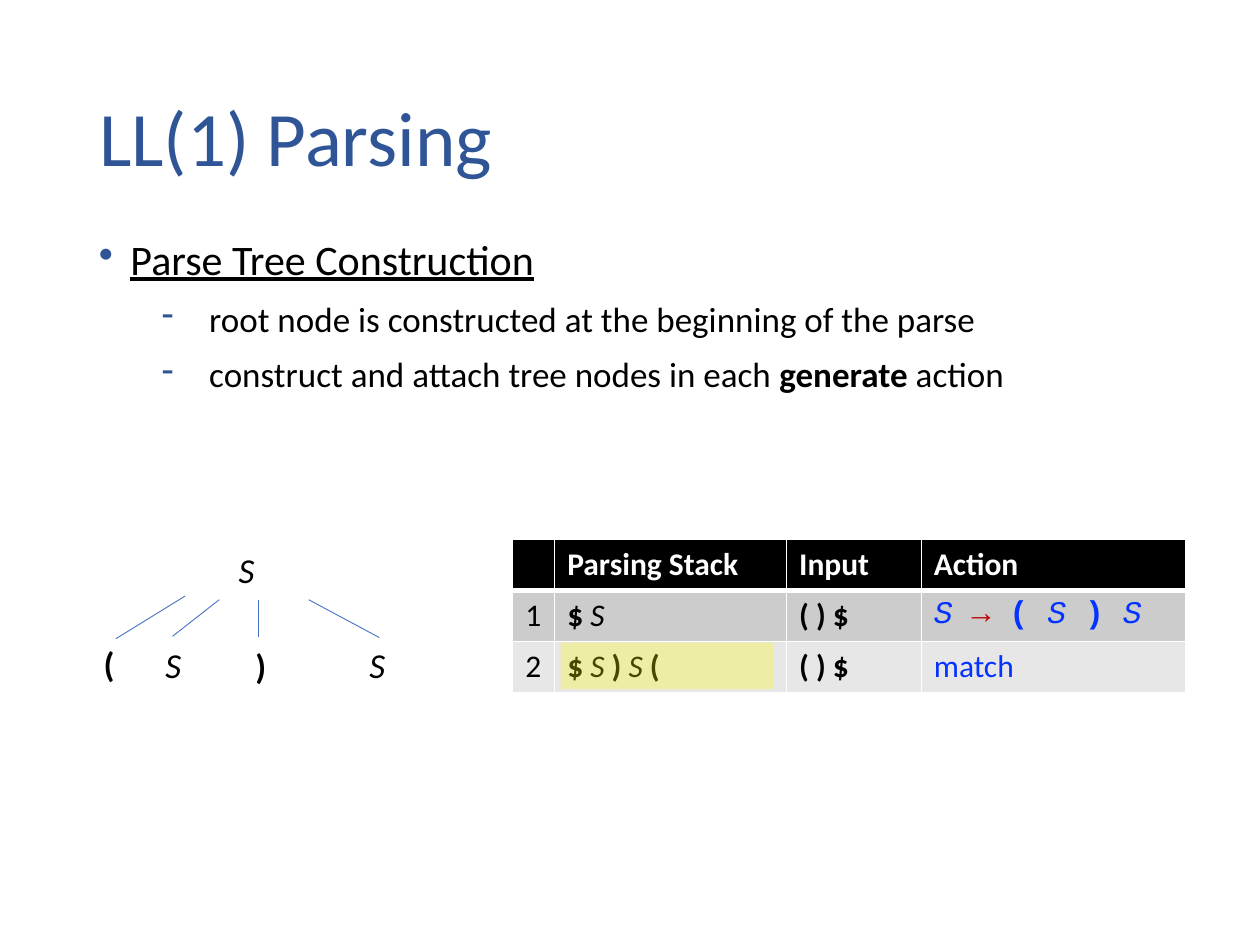
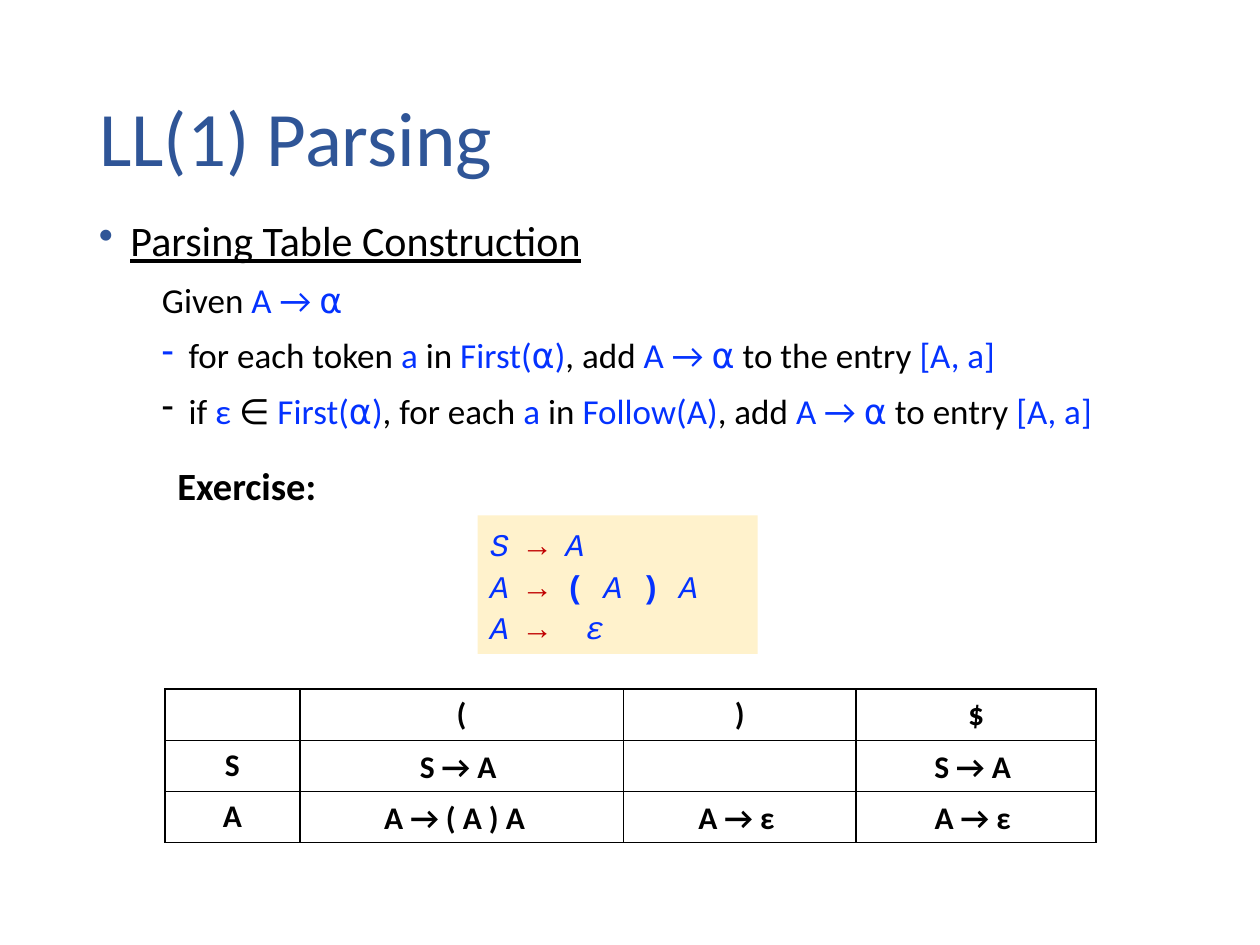
from collections import namedtuple
from itertools import accumulate

from lxml.etree import SubElement
from pptx import Presentation
from pptx.dml.color import RGBColor
from pptx.enum.shapes import MSO_CONNECTOR, MSO_SHAPE
from pptx.enum.text import MSO_ANCHOR, MSO_AUTO_SIZE, PP_ALIGN
from pptx.oxml.ns import qn
from pptx.util import Pt

BLACK = RGBColor(0x00, 0x00, 0x00)
WHITE = RGBColor(0xFF, 0xFF, 0xFF)
NAVY = RGBColor(0x2F, 0x55, 0x97)
BLUE = RGBColor(0x04, 0x32, 0xFF)
RED = RGBColor(0xC0, 0x00, 0x00)
EDGE_BLUE = RGBColor(0x44, 0x72, 0xC4)
YELLOW = RGBColor(0xFF, 0xFF, 0x00)
CREAM = RGBColor(0xFF, 0xF2, 0xCC)
GREY = RGBColor(0xCC, 0xCC, 0xCC)
LIGHT_GREY = RGBColor(0xE7, 0xE7, 0xE7)
BODY_FONT = "Calibri"
CODE_FONT = "Courier New"

# A run of text, and a paragraph made of runs
Run = namedtuple("Run", "text color bold italic underline font",
                 defaults=(BLACK, False, False, False, BODY_FONT))
Para = namedtuple("Para", "runs size margin indent bullet bullet_color",
                  defaults=(20, 0, 0, None, NAVY))


def blue(text):
    return Run(text, BLUE)


def bold(text, color=BLACK):
    return Run(text, color, bold=True)


def italic(text):
    return Run(text, italic=True)


def production(left, right, gap=" "):
    """Grammar rule: variables in italics, tokens in bold."""
    symbols = [Run(s + " " * (n < len(right)), BLUE, s in "()", s not in "()", font=CODE_FONT)
               for n, s in enumerate(right, 1)]
    return [Run(left + " ", BLUE, italic=True, font=CODE_FONT),
            Run("→" + gap, RED, font=CODE_FONT), *symbols]


class Deck:
    def __init__(self):
        self.prs = Presentation()
        self.prs.slide_width, self.prs.slide_height = Pt(720), Pt(540)
        self.slide = None

    def new_slide(self, heading):
        self.slide = self.prs.slides.add_slide(self.prs.slide_layouts[5])
        title = self.slide.shapes.title
        title.left, title.top, title.width, title.height = Pt(49.5), Pt(29), Pt(621), Pt(104)
        title.text_frame.auto_size = MSO_AUTO_SIZE.NONE
        title.text_frame.vertical_anchor = MSO_ANCHOR.MIDDLE
        paragraph = title.text_frame.paragraphs[0]
        paragraph.alignment = PP_ALIGN.LEFT
        paragraph.line_spacing = 0.9
        self.runs(paragraph, [Run(heading, NAVY)], 44)

    def runs(self, paragraph, runs, size):
        for item in runs:
            run = paragraph.add_run()
            run.text = item.text
            font = run.font
            font.name, font.size, font.color.rgb = item.font, Pt(size), item.color
            font.bold, font.italic, font.underline = item.bold, item.italic, item.underline

    def textbox(self, left, top, width, height, wrap=True):
        frame = self.slide.shapes.add_textbox(Pt(left), Pt(top), Pt(width), Pt(height)).text_frame
        frame.word_wrap = wrap
        return frame

    def body(self, top, height, paras):
        frame = self.textbox(49.5, top, 670.5, height)
        for n, para in enumerate(paras):
            paragraph = frame.add_paragraph() if n else frame.paragraphs[0]
            paragraph.line_spacing = 0.9
            paragraph.space_before = Pt(10)
            properties = paragraph._p.get_or_add_pPr()
            properties.set("marL", str(Pt(para.margin)))
            properties.set("indent", str(Pt(para.indent)))
            if para.bullet:
                tint = SubElement(properties, qn("a:buClr"))
                SubElement(tint, qn("a:srgbClr"), val=str(para.bullet_color))
                SubElement(properties, qn("a:buChar"), char=para.bullet)
            self.runs(paragraph, para.runs, para.size)

    def label(self, left, top, width, run, size, align=PP_ALIGN.CENTER):
        frame = self.textbox(left, top, width, size * 1.22 + 7.2, wrap=False)
        frame.paragraphs[0].alignment = align
        self.runs(frame.paragraphs[0], [run], size)

    def grammar(self, left, top, width, height, rules, tab):
        frame = self.textbox(left, top, width, height)
        for n, rule in enumerate(rules):
            paragraph = frame.add_paragraph() if n else frame.paragraphs[0]
            paragraph.line_spacing = 1.1
            tabs = SubElement(paragraph._p.get_or_add_pPr(), qn("a:tabLst"))
            SubElement(tabs, qn("a:tab"), pos=str(Pt(tab)), algn="l")
            self.runs(paragraph, rule, 18)

    def rect(self, left, top, width, height, color, opacity=None):
        rect = self.slide.shapes.add_shape(MSO_SHAPE.RECTANGLE, Pt(left), Pt(top),
                                           Pt(width), Pt(height))
        rect.shadow.inherit = False
        rect.line.fill.background()
        rect.fill.solid()
        rect.fill.fore_color.rgb = color
        if opacity:
            tint = rect.fill._xPr.find(qn("a:solidFill"))[0]
            SubElement(tint, qn("a:alpha"), val=str(opacity * 1000))

    def line(self, x1, y1, x2, y2):
        line = self.slide.shapes.add_connector(MSO_CONNECTOR.STRAIGHT,
                                               Pt(x1), Pt(y1), Pt(x2), Pt(y2))
        line.line.color.rgb = EDGE_BLUE
        line.line.width = Pt(0.5)
        SubElement(line._element.spPr, qn("a:effectLst"))

    def table(self, left, top, widths, row_height, rows, fills, border,
              header_rule=1, align=PP_ALIGN.LEFT):
        table = self.slide.shapes.add_table(
            len(rows), len(widths), Pt(left), Pt(top),
            Pt(sum(widths)), Pt(row_height * len(rows))).table
        table.first_row = table.horz_banding = False
        for column, width in zip(table.columns, widths):
            column.width = Pt(width)
        for r, (row, fill) in enumerate(zip(rows, fills)):
            table.rows[r].height = Pt(row_height)
            for c, runs in enumerate(row):
                cell = table.cell(r, c)
                self.borders(cell, border, top=header_rule if r == 1 else 1,
                             bottom=header_rule if r == 0 else 1)
                if fill:
                    cell.fill.solid()
                    cell.fill.fore_color.rgb = fill
                else:
                    cell.fill.background()
                paragraph = cell.text_frame.paragraphs[0]
                paragraph.alignment = align
                paragraph.font.size = Pt(18)
                self.runs(paragraph, runs, 18)

    def borders(self, cell, color, top, bottom):
        properties = cell._tc.get_or_add_tcPr()
        for side, width in (("L", 1), ("R", 1), ("T", top), ("B", bottom)):
            edge = SubElement(properties, qn("a:ln" + side), w=str(Pt(width)))
            fill = SubElement(edge, qn("a:solidFill"))
            SubElement(fill, qn("a:srgbClr"), val=str(color))


def topic(text):
    return Para([Run(text, underline=True)], 24, 18, -18, "•")


def parse_tree_slide(deck):
    deck.new_slide("LL(1) Parsing")
    deck.body(133, 159, [
        topic("Parse Tree Construction"),
        Para([Run("root node is constructed at the beginning of the parse")], 20, 63, -27, "-"),
        Para([Run("construct and attach tree nodes in each "), bold("generate "),
              Run("action")], 20, 63, -27, "-"),
    ])

    # Parsing steps
    remaining_input = [bold("( ) $")]
    deck.table(293, 308.2, [24, 132.5, 77, 151], 29.25, [
        [[], *([bold(name, WHITE)] for name in ("Parsing Stack", "Input", "Action"))],
        [[Run("1")], [bold("$ "), italic("S")], remaining_input, production("S", "(S)S")],
        [[Run("2")], [bold("$ "), italic("S"), bold(" ) "), italic("S"), bold(" (")],
         remaining_input, [blue("match")]],
    ], [BLACK, GREY, LIGHT_GREY], WHITE, header_rule=3)

    # Parse tree: nodes by centre and top, then edges
    node_width = 24
    for center, top, symbol in [(140.8, 309.6, italic("S")), (62.3, 363.6, bold("(")),
                                (99, 364.3, italic("S")), (149, 365, bold(")")),
                                (215.6, 364.3, italic("S"))]:
        deck.label(center - node_width / 2, top, node_width, symbol, 20)
    for edge in [(105.8, 340.6, 66.2, 365), (125.3, 342.7, 98.6, 363.6),
                 (147.6, 342.7, 147.6, 364.3), (176.4, 342.7, 216.7, 364.3)]:
        deck.line(*edge)

    # Highlighted stack
    deck.rect(320.4, 367.2, 121.7, 26.6, YELLOW, opacity=28)


def parsing_table_slide(deck):
    deck.new_slide("LL(1) Parsing")

    # Grammar
    deck.rect(273, 294.5, 160, 79.2, CREAM)
    deck.grammar(273, 294.5, 205, 79.2, [
        production("S", "A"), production("A", "(A)A"), production("A", "ε", gap="\t"),
    ], tab=54.5)

    # Parsing table
    left, top, row_height = 94.3, 393.8, 29.25
    widths = [77, 185, 133, 137]
    deck.table(left, top, widths, row_height, [
        [[], [bold("(")], [bold(")")], [bold("$")]],
        [[bold("S")], [], [], []],
        [[bold("A")], [], [], []],
    ], [None] * 3, BLACK, align=PP_ALIGN.CENTER)
    deck.label(94.3, 260.6, 95, bold("Exercise:"), 22, PP_ALIGN.LEFT)

    # Answers, centred on their columns
    column_ends = list(accumulate(widths, initial=left))
    for row, column, width, rule in [(1, 1, 60, "S → A"), (2, 1, 101.5, "A → ( A ) A "),
                                     (1, 3, 60, "S → A"), (2, 2, 60, "A → ε"),
                                     (2, 3, 60, "A → ε")]:
        center = column_ends[column] + widths[column] / 2 - 2
        deck.label(center - width / 2, top + row * row_height, width, bold(rule), 18)

    # Construction rules
    rule, first, entry = blue("A → ⍺"), blue("First(⍺)"), blue("[A, a]")
    deck.body(122.4, 141, [
        topic("Parsing Table Construction"),
        Para([Run("Given "), rule], 20, 36),
        Para([Run("for each token "), blue("a"), Run(" in "), first, Run(", add "), rule,
              Run(" to the entry "), entry], 20, 51.2, -15.2, "-", BLUE),
        Para([Run("if "), blue("ε"), Run(" ∈ "), first, Run(", for each "), blue("a"),
              Run(" in "), blue("Follow(A)"), Run(", add "), rule, Run(" to entry "), entry],
             20, 51.2, -15.2, "-", BLACK),
    ])


def main():
    deck = Deck()
    parse_tree_slide(deck)
    parsing_table_slide(deck)
    deck.prs.save("out.pptx")


if __name__ == "__main__":
    main()
